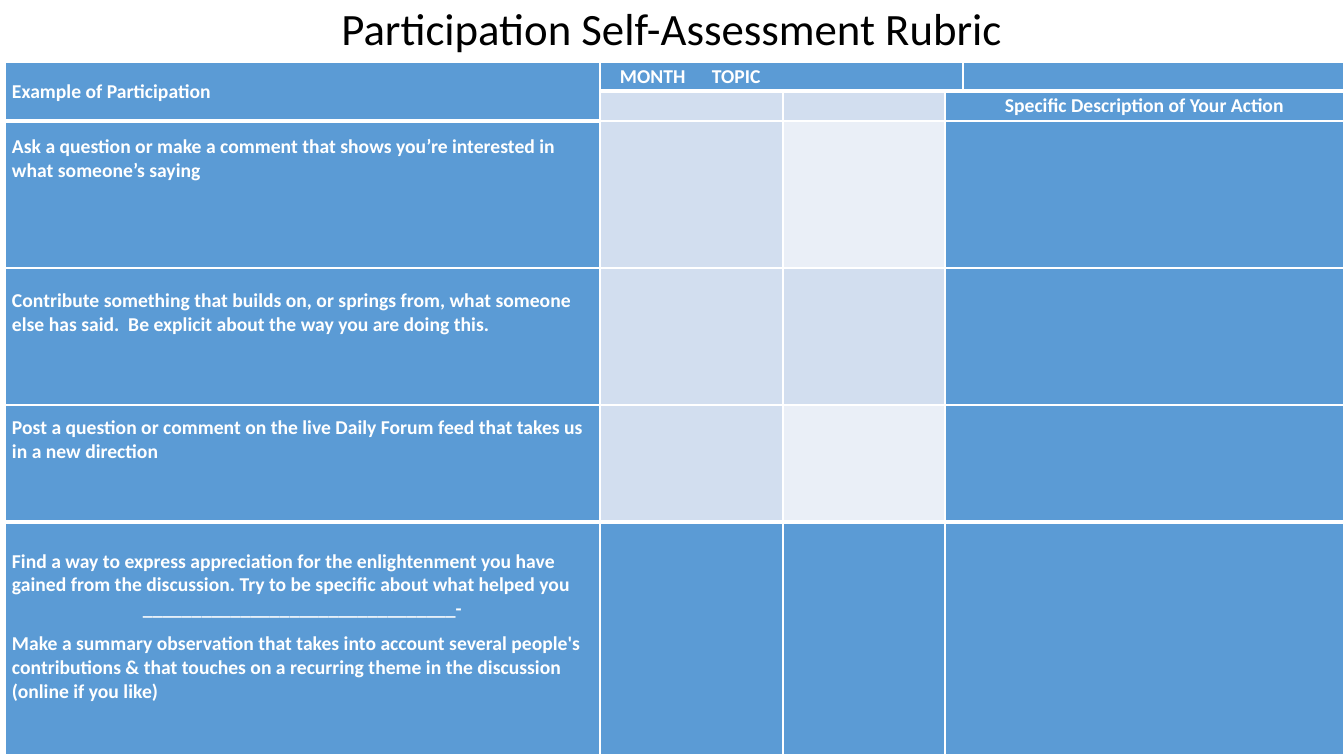
from dataclasses import dataclass

from lxml import etree
from pptx import Presentation
from pptx.dml.color import RGBColor
from pptx.enum.text import MSO_ANCHOR, PP_ALIGN
from pptx.oxml.ns import qn
from pptx.util import Pt

LEFT, CENTER = PP_ALIGN.LEFT, PP_ALIGN.CENTER
MIDDLE = MSO_ANCHOR.MIDDLE
TITLE_ONLY = 5
EMU_PER_PX = 914400 / 100.8


@dataclass(frozen=True)
class Theme:
    font: str = "Calibri"
    black: str = "000000"
    white: str = "FFFFFF"
    blue: str = "5B9BD5"
    band: str = "D2DEEF"
    pale: str = "EAEFF7"
    title_size: int = 32
    cell_size: int = 14
    thin: int = 1
    thick: int = 3


THEME = Theme()

COLS = [595, 183, 162, 18, 381]
ROWS = [29, 30, 147, 137, 117, 233]
LINE = 24  # height of one text line
MERGES = [((0, 0), (1, 0)), ((0, 1), (0, 3))] + [((r, 3), (r, 4)) for r in range(1, 6)]

# Fills of the two marking columns; every other cell is blue
MARK_FILLS = {
    1: (THEME.band, THEME.band),
    2: (THEME.band, THEME.pale),
    3: (THEME.band, THEME.band),
    4: (THEME.band, THEME.pale),
}

# Row: (paragraphs of (text, align, space before), lines left free below)
EXAMPLES = {
    2: ([("Ask a question or make a comment that shows you’re interested in "
          "what someone’s saying", LEFT, 7.7)], 3),
    3: ([("Contribute something that builds on, or springs from, what someone "
          "else has said.  Be explicit about the way you are doing this.", LEFT, 7.7)], 2),
    4: ([("Post a question or comment on the live Daily Forum feed that takes "
          "us in a new direction", LEFT, 7.7)], 2),
    5: ([("Find a way to express appreciation for the enlightenment you have "
          "gained from the discussion. Try to be specific about what helped you", LEFT, 7.7),
         ("_" * 32 + "-", CENTER, 0),
         ("Make a summary observation that takes into account several people's "
          "contributions & that touches on a recurring theme in the discussion "
          "(online if you like)", LEFT, 7.7)], 1),
}


def px(n):
    return round(n * EMU_PER_PX)


def write(p, text, *, size, color, bold=False, align=LEFT, before=0, spacing=1.0):
    p.alignment = align
    p.space_before = Pt(before)
    p.line_spacing = spacing
    r = p.add_run()
    r.text = text
    r.font.name = THEME.font
    r.font.size = Pt(size)
    r.font.bold = bold
    r.font.color.rgb = RGBColor.from_string(color)


def add_title(s, text):
    sp = s.shapes.title
    sp.left, sp.top, sp.width, sp.height = 0, 0, px(1344), px(62)
    tf = sp.text_frame
    tf.vertical_anchor = MIDDLE
    write(tf.paragraphs[0], text, size=THEME.title_size, color=THEME.black,
          align=CENTER, spacing=0.9)


def fill_cell(cell, paragraphs, inset=7, below=0):
    cell.margin_left, cell.margin_bottom = px(inset), px(below)
    tf = cell.text_frame
    for i, (text, align, before) in enumerate(paragraphs):
        p = tf.add_paragraph() if i else tf.paragraphs[0]
        write(p, text, size=THEME.cell_size, color=THEME.white, bold=True,
              align=align, before=before)


def set_borders(cell, top, bottom):
    tc_pr = cell._tc.get_or_add_tcPr()
    widths = {"a:lnL": THEME.thin, "a:lnR": THEME.thin, "a:lnT": top, "a:lnB": bottom}
    for i, (tag, width) in enumerate(widths.items()):
        ln = etree.Element(qn(tag), w=str(Pt(width)))
        fill = etree.SubElement(ln, qn("a:solidFill"))
        etree.SubElement(fill, qn("a:srgbClr"), val=THEME.white)
        tc_pr.insert(i, ln)


def set_tab(p, pos):
    tabs = etree.SubElement(p._p.get_or_add_pPr(), qn("a:tabLst"))
    etree.SubElement(tabs, qn("a:tab"), pos=str(px(pos)), algn="l")


def style_cell(cell, row, col):
    cell.margin_left = cell.margin_right = px(7)
    cell.margin_top = cell.margin_bottom = 0
    cell.vertical_anchor = MIDDLE
    color = MARK_FILLS[row][col - 1] if row in MARK_FILLS and col in (1, 2) else THEME.blue
    cell.fill.solid()
    cell.fill.fore_color.rgb = RGBColor.from_string(color)
    # Thick rules: below the header and above the last row
    heavy_top = row in (1, 5) or (row, col) == (2, 0)
    heavy_bottom = row in (0, 4)
    set_borders(cell, THEME.thick if heavy_top else THEME.thin,
                THEME.thick if heavy_bottom else THEME.thin)


def add_rubric(s):
    frame = s.shapes.add_table(len(ROWS), len(COLS), px(5), px(62),
                               px(sum(COLS)), px(sum(ROWS)))
    table = frame.table
    table.first_row = table.horz_banding = False
    for column, width in zip(table.columns, COLS):
        column.width = px(width)
    for row, height in zip(table.rows, ROWS):
        row.height = px(height)
    for first, last in MERGES:
        table.cell(*first).merge(table.cell(*last))

    # Fills and borders
    for row in range(len(ROWS)):
        for col in range(len(COLS)):
            cell = table.cell(row, col)
            if not cell.is_spanned:
                style_cell(cell, row, col)

    # Header
    fill_cell(table.cell(0, 0), [("Example of Participation", LEFT, 0)])
    month = table.cell(0, 1)
    fill_cell(month, [("MONTH\tTOPIC", LEFT, 0)], inset=20)
    set_tab(month.text_frame.paragraphs[0], 92)
    fill_cell(table.cell(1, 3), [("Specific Description of Your Action", CENTER, 0)])

    # Ways to participate
    for row, (paragraphs, free_lines) in EXAMPLES.items():
        fill_cell(table.cell(row, 0), paragraphs, below=free_lines * LINE)

    # Empty cells keep the small type size so that rows do not grow
    for cell in table.iter_cells():
        if not cell.text_frame.text:
            p = cell.text_frame.paragraphs[0]
            etree.SubElement(p._p, qn("a:endParaRPr"), sz=str(THEME.cell_size * 100))


def main():
    prs = Presentation()
    prs.slide_width, prs.slide_height = px(1344), px(756)
    s = prs.slides.add_slide(prs.slide_layouts[TITLE_ONLY])
    add_title(s, "Participation Self-Assessment Rubric")
    add_rubric(s)
    prs.save("out.pptx")


if __name__ == "__main__":
    main()
